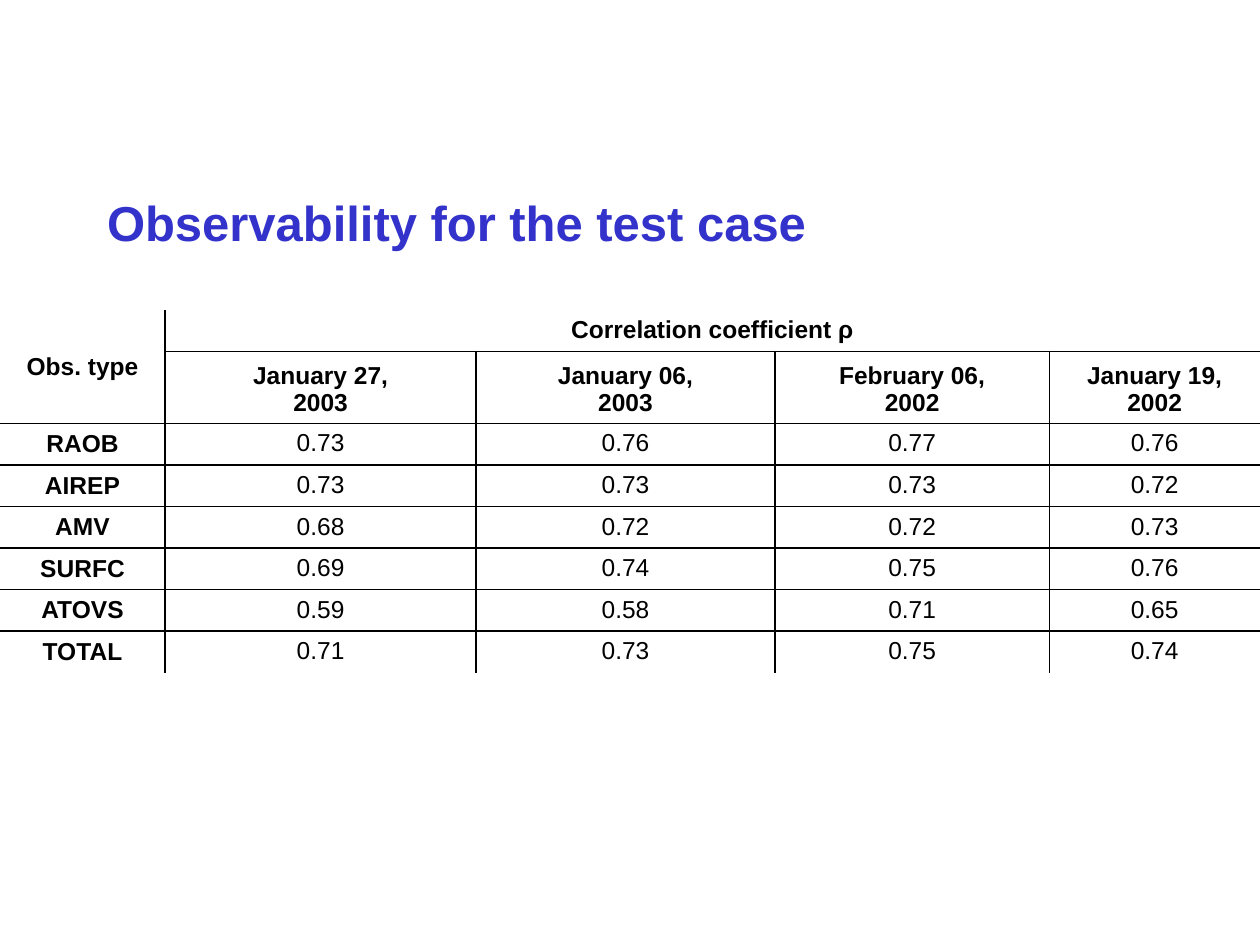
from lxml.etree import SubElement
from pptx import Presentation
from pptx.dml.color import RGBColor
from pptx.enum.text import MSO_ANCHOR, PP_ALIGN
from pptx.oxml.ns import qn
from pptx.util import Inches, Pt

COLORS = {"title": "3333CC", "text": "000000", "border": "000000"}
FONT = "Arial"
COLUMN_WIDTHS = [1.31, 2.47, 2.37, 2.18, 1.67]
ROW_HEIGHTS = [0.33, 0.57] + [0.33] * 6
DATES = ["January 27,\n2003", "January 06,\n2003", "February 06,\n2002", "January 19, 2002"]
CORRELATIONS = {
    "RAOB": ["0.73", "0.76", "0.77", "0.76"],
    "AIREP": ["0.73", "0.73", "0.73", "0.72"],
    "AMV": ["0.68", "0.72", "0.72", "0.73"],
    "SURFC": ["0.69", "0.74", "0.75", "0.76"],
    "ATOVS": ["0.59", "0.58", "0.71", "0.65"],
    "TOTAL": ["0.71", "0.73", "0.75", "0.74"],
}


def format_text(frame, size, color, bold, alignment):
    """Give every paragraph and span in a text frame the same look."""
    for para in frame.paragraphs:
        para.alignment = alignment
        for span in para.runs:
            span.font.name = FONT
            span.font.size = Pt(size)
            span.font.bold = bold
            span.font.color.rgb = RGBColor.from_string(COLORS[color])


def add_title(page, text):
    """Place the slide title in its placeholder."""
    title = page.shapes.title
    title.left, title.top = Inches(0.75), Inches(1.47)
    title.width, title.height = Inches(8.5), Inches(0.58)
    frame = title.text_frame
    frame.text = text
    frame.vertical_anchor = MSO_ANCHOR.MIDDLE
    format_text(frame, 28, "title", True, PP_ALIGN.LEFT)


def set_borders(cell, visible):
    """Draw the visible sides of a cell and blank the others."""
    properties = cell._tc.get_or_add_tcPr()
    for side, shown in visible.items():
        line = SubElement(properties, qn(f"a:ln{side}"), w=str(Pt(1) if shown else 0))
        fill = SubElement(line, qn("a:solidFill" if shown else "a:noFill"))
        if shown:
            SubElement(fill, qn("a:srgbClr"), val=COLORS["border"])


def format_cell(cell, row, column):
    """Style a cell according to its place in the table."""
    set_borders(cell, {
        "L": column > 0,
        "R": column + cell.span_width < len(COLUMN_WIDTHS),
        "T": row > 0,
        "B": row + cell.span_height < len(ROW_HEIGHTS),
    })
    cell.fill.background()
    if column == 0:
        cell.vertical_anchor = MSO_ANCHOR.MIDDLE
    else:
        cell.vertical_anchor = MSO_ANCHOR.BOTTOM if row == 1 else MSO_ANCHOR.TOP
    format_text(cell.text_frame, 14, "text", row < 2 or column == 0, PP_ALIGN.CENTER)


def add_correlation_table(page):
    """Add the table of correlations by observation type and date."""
    rows = [["Obs. type", "Correlation coefficient ρ", "", "", ""], ["", *DATES]]
    rows += [[name, *values] for name, values in CORRELATIONS.items()]
    table = page.shapes.add_table(
        len(rows), len(COLUMN_WIDTHS), Inches(0), Inches(2.46), Inches(10), Inches(2.9)
    ).table
    table.first_row = table.horz_banding = False
    for column, width in zip(table.columns, COLUMN_WIDTHS):
        column.width = Inches(width)
    for row, height in zip(table.rows, ROW_HEIGHTS):
        row.height = Inches(height)
    table.cell(0, 0).merge(table.cell(1, 0))
    table.cell(0, 1).merge(table.cell(0, 4))
    for row, texts in enumerate(rows):
        for column, text in enumerate(texts):
            cell = table.cell(row, column)
            cell.text_frame.text = text
            format_cell(cell, row, column)


def main():
    """Build and save the observability slide."""
    deck = Presentation()
    deck.slide_width, deck.slide_height = Inches(10), Inches(7.5)
    page = deck.slides.add_slide(deck.slide_layouts[5])
    add_title(page, "Observability for the test case")
    add_correlation_table(page)
    deck.save("out.pptx")


if __name__ == "__main__":
    main()
